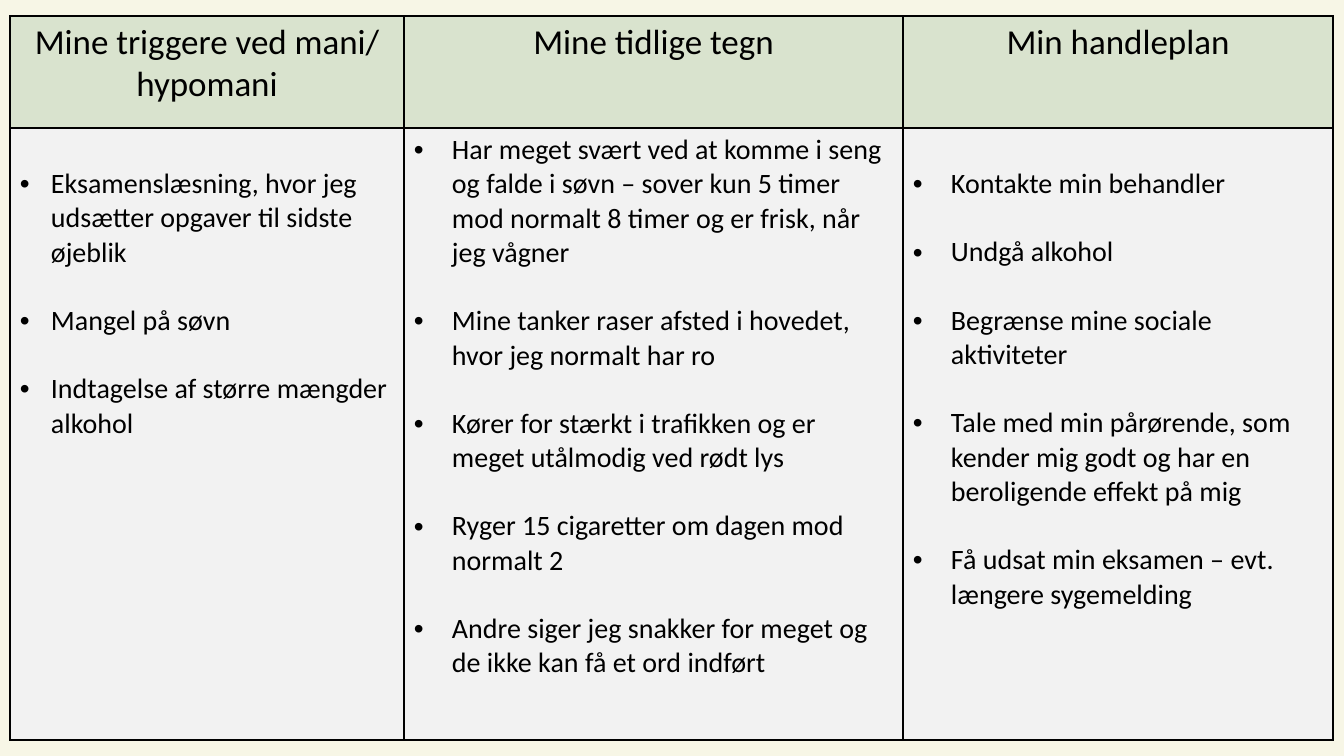
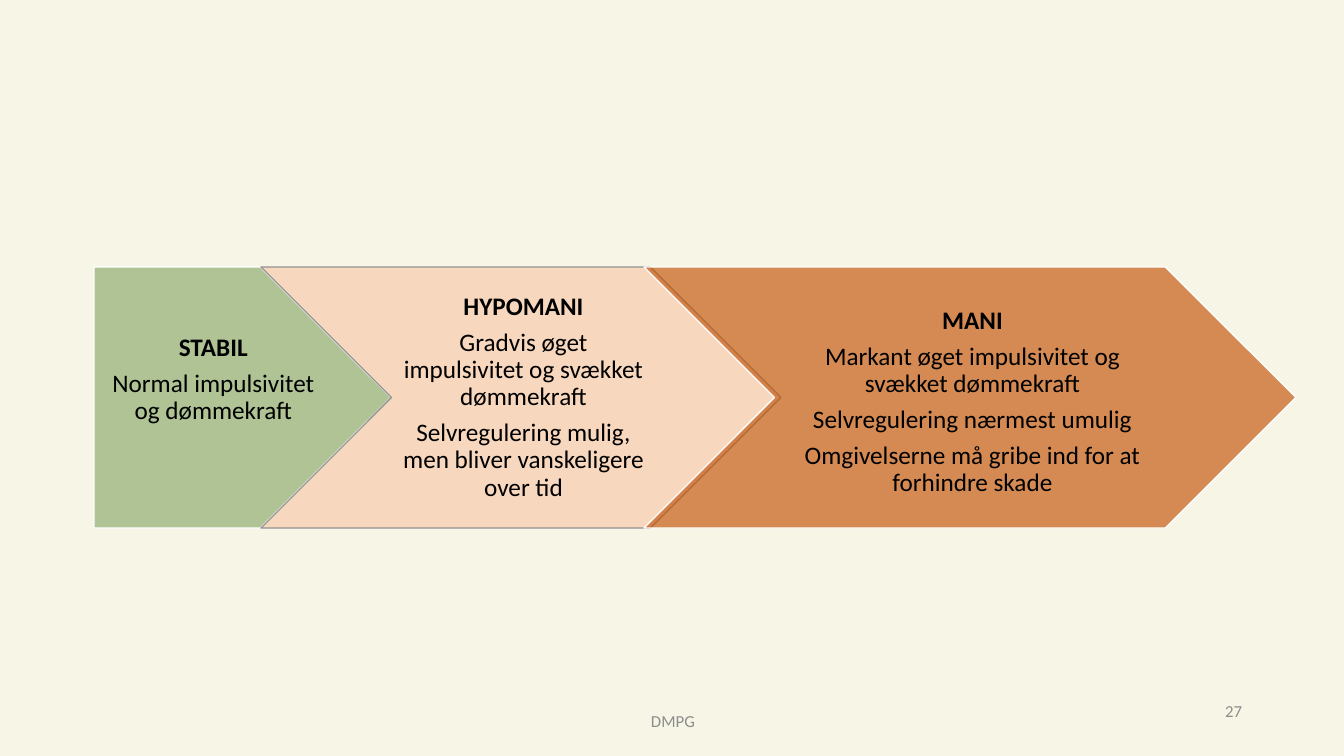
from lxml import etree
from pptx import Presentation
from pptx.dml.color import RGBColor
from pptx.enum.shapes import MSO_SHAPE
from pptx.enum.text import MSO_ANCHOR, PP_ALIGN
from pptx.oxml.ns import qn
from pptx.util import Emu, Pt

CENTER, LEFT, RIGHT = PP_ALIGN.CENTER, PP_ALIGN.LEFT, PP_ALIGN.RIGHT
TOP, MIDDLE = MSO_ANCHOR.TOP, MSO_ANCHOR.MIDDLE
PENTAGON, CHEVRON = MSO_SHAPE.PENTAGON, MSO_SHAPE.CHEVRON

FONT = "Calibri"
CREAM = RGBColor(0xF7, 0xF6, 0xE6)
BLACK = RGBColor(0, 0, 0)
WHITE = RGBColor(0xFF, 0xFF, 0xFF)
GREY = RGBColor(0x8C, 0x8C, 0x8C)
LINE_GREY = RGBColor(0x92, 0x92, 0x92)
HEAD_GREEN = RGBColor(0xD9, 0xE3, 0xCE)
CELL_GREY = RGBColor(0xF2, 0xF2, 0xF2)
GREEN = RGBColor(0xA1, 0xB9, 0x85)
PEACH = RGBColor(0xF8, 0xCB, 0xAD)
ORANGE = RGBColor(0xC5, 0x5A, 0x11)

SLIDE_W, SLIDE_H = 1344, 756
TABLE_X, TABLE_Y = 10, 16
ROW_HEIGHTS = (112, 612)
CELL_INSET = (10, 5, 10, 5)
BLANK_LINE = 34
STAGE_Y, STAGE_H = 267, 261

PLAN = [
    {"title": "Mine triggere ved mani/ hypomani", "width": 394, "indent": 31, "drop": BLANK_LINE,
     "items": ["Eksamenslæsning, hvor jeg udsætter opgaver til sidste øjeblik",
               "Mangel på søvn",
               "Indtagelse af større mængder alkohol"]},
    {"title": "Mine tidlige tegn", "width": 499, "indent": 38, "drop": 0,
     "items": ["Har meget svært ved at komme i seng og falde i søvn – sover kun 5 timer "
               "mod normalt 8 timer og er frisk, når jeg vågner",
               "Mine tanker raser afsted i hovedet, hvor jeg normalt har ro",
               "Kører for stærkt i trafikken og er meget utålmodig ved rødt lys",
               "Ryger 15 cigaretter om dagen mod normalt 2",
               "Andre siger jeg snakker for meget og de ikke kan få et ord indført"]},
    {"title": "Min handleplan", "width": 430, "indent": 38, "drop": BLANK_LINE,
     "items": ["Kontakte min behandler",
               "Undgå alkohol",
               "Begrænse mine sociale aktiviteter",
               "Tale med min pårørende, som kender mig godt og har en beroligende effekt på mig",
               "Få udsat min eksamen – evt. længere sygemelding"]},
]

STAGES = [
    {"title": "STABIL", "shape": PENTAGON, "x": 94, "width": 297, "fill": GREEN, "alpha": 83,
     "line": WHITE, "inset": (10, 5, 3, 40),
     "lines": ["Normal impulsivitet og dømmekraft"]},
    {"title": "HYPOMANI", "shape": CHEVRON, "x": 261, "width": 520, "fill": PEACH, "alpha": 70,
     "line": LINE_GREY, "inset": (8, 5, 3, 5),
     "lines": ["Gradvis øget impulsivitet og svækket dømmekraft",
               "Selvregulering mulig, men bliver vanskeligere over tid"]},
    {"title": "MANI", "shape": CHEVRON, "x": 644, "width": 652, "fill": ORANGE, "alpha": 69,
     "line": WHITE, "inset": (7, 15, 2, 5),
     "lines": ["Markant øget impulsivitet og svækket dømmekraft",
               "Selvregulering nærmest umulig",
               "Omgivelserne må gribe ind for at forhindre skade"]},
]

FOOTERS = [("DMPG", (446, 701, 454, 40), CENTER), ("27", (950, 681, 302, 60), RIGHT)]


def px(n):
    return Emu(round(n * 914400 / 100.8))


def set_insets(target, inset):
    target.margin_left, target.margin_top, target.margin_right, target.margin_bottom = map(px, inset)


def add_paragraph(tf, first, text, size, align, color=BLACK, bold=False):
    p = tf.paragraphs[0] if first else tf.add_paragraph()
    p.alignment = align
    r = p.add_run()
    r.text = text
    r.font.name, r.font.size, r.font.bold = FONT, Pt(size), bold
    r.font.color.rgb = color
    return p


def add_bullet(p, indent):
    pPr = p._p.get_or_add_pPr()
    pPr.set("marL", str(px(indent)))
    pPr.set("indent", str(-px(indent)))
    etree.SubElement(pPr, qn("a:buFont")).set("typeface", "Arial")
    etree.SubElement(pPr, qn("a:buChar")).set("char", "•")


def style_cell(cell, color, inset):
    tcPr = cell._tc.get_or_add_tcPr()
    for side in ("lnL", "lnR", "lnT", "lnB"):
        ln = etree.SubElement(tcPr, qn("a:" + side), w=str(Pt(1)))
        fill = etree.SubElement(ln, qn("a:solidFill"))
        etree.SubElement(fill, qn("a:srgbClr"), val=str(BLACK))
    cell.fill.solid()
    cell.fill.fore_color.rgb = color
    cell.vertical_anchor = TOP
    set_insets(cell, inset)


def add_plan(s):
    width = sum(col["width"] for col in PLAN)
    frame = s.shapes.add_table(2, len(PLAN), px(TABLE_X), px(TABLE_Y), px(width), px(sum(ROW_HEIGHTS)))
    table = frame.table
    table.first_row = table.horz_banding = False
    for row, height in zip(table.rows, ROW_HEIGHTS):
        row.height = px(height)
    left, top, right, bottom = CELL_INSET
    for i, col in enumerate(PLAN):
        table.columns[i].width = px(col["width"])
        head, body = table.cell(0, i), table.cell(1, i)
        style_cell(head, HEAD_GREEN, CELL_INSET)
        style_cell(body, CELL_GREY, (left, top + col["drop"], right, bottom))
        add_paragraph(head.text_frame, True, col["title"], 25, CENTER)
        for j, item in enumerate(col["items"]):
            p = add_paragraph(body.text_frame, j == 0, item, 20, LEFT)
            add_bullet(p, col["indent"])
            if j:
                p.space_before = px(BLANK_LINE)


def add_stage(s, stage):
    sp = s.shapes.add_shape(stage["shape"], px(stage["x"]), px(STAGE_Y), px(stage["width"]), px(STAGE_H))
    sp.shadow.inherit = False
    sp.fill.solid()
    sp.fill.fore_color.rgb = stage["fill"]
    clr = sp._element.spPr.find(qn("a:solidFill"))[0]
    etree.SubElement(clr, qn("a:alpha")).set("val", str(stage["alpha"] * 1000))
    sp.line.color.rgb = stage["line"]
    sp.line.width = Pt(1)
    tf = sp.text_frame
    tf.word_wrap = True
    tf.vertical_anchor = MIDDLE
    set_insets(tf, stage["inset"])
    for i, text in enumerate([stage["title"]] + stage["lines"]):
        p = add_paragraph(tf, i == 0, text, 18, CENTER, bold=i == 0)
        p.line_spacing = 0.9
        p.space_after = Pt(6.3)


def add_footer(s, text, box, align):
    tf = s.shapes.add_textbox(*map(px, box)).text_frame
    tf.word_wrap = True
    tf.vertical_anchor = MIDDLE
    add_paragraph(tf, True, text, 12, align, GREY)


def main():
    prs = Presentation()
    prs.slide_width, prs.slide_height = px(SLIDE_W), px(SLIDE_H)
    background = prs.slide_master.background.fill
    background.solid()
    background.fore_color.rgb = CREAM
    blank = prs.slide_layouts[6]

    add_plan(prs.slides.add_slide(blank))

    s = prs.slides.add_slide(blank)
    for stage in STAGES:
        add_stage(s, stage)
    for footer in FOOTERS:
        add_footer(s, *footer)

    prs.save("out.pptx")


if __name__ == "__main__":
    main()
